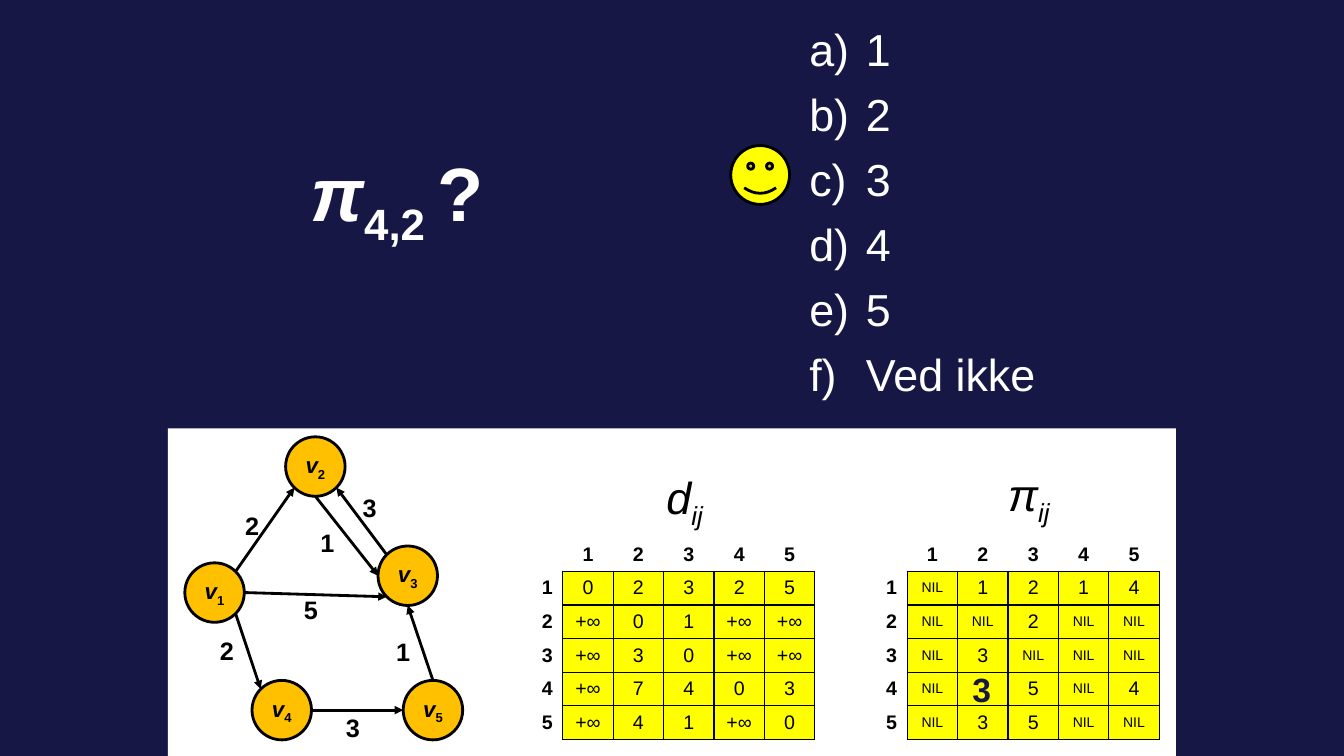
from math import cos, radians, sin

from lxml import etree
from pptx import Presentation
from pptx.dml.color import RGBColor
from pptx.enum.shapes import MSO_CONNECTOR as Connector, MSO_SHAPE as Shape
from pptx.enum.text import MSO_ANCHOR as Anchor, PP_ALIGN as Align
from pptx.oxml.ns import qn
from pptx.util import Pt

NAVY, WHITE, BLACK, YELLOW, ORANGE = "171745", "FFFFFF", "000000", "FFFF00", "FFC000"
SUBSCRIPT = -25000
NODE = 42.5
CELL_WIDTH, CELL_HEIGHT = 36, 24

NODES = {1: (12, 96), 2: (84, 6), 3: (150, 84), 4: (60, 180), 5: (168, 180)}
# Node and connection site at each end; sites run counter-clockwise from the top.
EDGES = [(3, 1, 2, 5), (1, 7, 2, 3), (1, 5, 4, 1), (2, 4, 3, 2),
         (4, 6, 5, 2), (1, 6, 3, 3), (5, 0, 3, 4)]
WEIGHTS = [("2", 30, 144, 24, Align.LEFT), ("2", 48, 55, 24, Align.LEFT),
           ("5", 90, 115, 24, Align.LEFT), ("3", 120, 199, 24, Align.LEFT),
           ("1", 132, 145, 48, Align.RIGHT), ("3", 132, 42, 24, Align.LEFT),
           ("1", 84, 67, 42, Align.RIGHT)]
DISTANCES = ["0 2 3 2 5", "+∞ 0 1 +∞ +∞", "+∞ 3 0 +∞ +∞", "+∞ 7 4 0 3", "+∞ 4 1 +∞ 0"]
PREDECESSORS = ["NIL 1 2 1 4", "NIL NIL 2 NIL NIL", "NIL 3 NIL NIL NIL",
                "NIL - 5 NIL 4", "NIL 3 5 NIL NIL"]


def color(value):
    return RGBColor.from_string(value)


def add_run(paragraph, text, size, hue, baseline=0, **formats):
    run = paragraph.add_run()
    run.text = text
    for name, value in {"name": "Arial", "size": Pt(size), "bold": False, "italic": False,
                        **formats}.items():
        setattr(run.font, name, value)
    run.font.color.rgb = color(hue)
    if baseline:
        run.font._element.set("baseline", str(baseline))


def add_text_box(slide, left, top, width, height, align=Align.LEFT):
    """Add a wrapping text box and return its frame."""
    frame = slide.shapes.add_textbox(Pt(left), Pt(top), Pt(width), Pt(height)).text_frame
    frame.word_wrap = True
    frame.paragraphs[0].alignment = align
    return frame


def add_figure(slide, kind, left, top, width, height, fill, outline=True):
    shape = slide.shapes.add_shape(kind, Pt(left), Pt(top), Pt(width), Pt(height))
    shape.shadow.inherit = False
    shape.fill.solid()
    shape.fill.fore_color.rgb = color(fill)
    if outline:
        shape.line.color.rgb = color(BLACK)
        shape.line.width = Pt(2)
    else:
        shape.line.fill.background()
    return shape


def add_question(slide, left, top, width, height):
    title = slide.shapes.title
    for name, value in {"left": left, "top": top, "width": width, "height": height}.items():
        setattr(title, name, Pt(value))
    title.text_frame.vertical_anchor = Anchor.MIDDLE
    paragraph = title.text_frame.paragraphs[0]
    paragraph.alignment = Align.CENTER
    add_run(paragraph, " π", 54, WHITE, bold=True, italic=True)
    add_run(paragraph, "4,2 ", 54, WHITE, SUBSCRIPT, bold=True)
    add_run(paragraph, "?", 54, WHITE, bold=True)


def add_answers(slide, left, top, width, height):
    frame = add_text_box(slide, left, top, width, height)
    for index, answer in enumerate(["1", "2", "3", "4", "5", "Ved ikke"]):
        paragraph = frame.add_paragraph() if index else frame.paragraphs[0]
        paragraph.space_before = Pt(8 if index else 3)
        add_run(paragraph, answer, 32, WHITE)
        properties = paragraph._p.get_or_add_pPr()
        properties.set("marL", str(Pt(40.5)))
        properties.set("indent", str(-Pt(40.5)))
        etree.SubElement(properties, qn("a:buFont"), typeface="Arial")
        etree.SubElement(properties, qn("a:buAutoNum"), type="alphaLcParenR")
    add_figure(slide, Shape.SMILEY_FACE, left - 49, top + 92, 42, 42, YELLOW)


def add_arrow(slide, start, end):
    arrow = slide.shapes.add_connector(Connector.STRAIGHT, *map(Pt, start + end))
    arrow.line.color.rgb = color(BLACK)
    arrow.line.width = Pt(2)
    etree.SubElement(arrow.line._get_or_add_ln(), qn("a:tailEnd"), type="triangle")
    etree.SubElement(arrow._element.spPr, qn("a:effectLst"))


def add_graph(slide, left, top):
    def site_point(node, site):
        x, y = NODES[node]
        angle, radius = radians(45 * site), NODE / 2
        return (left + x + radius * (1 - sin(angle)), top + y + radius * (1 - cos(angle)))

    for number, (x, y) in NODES.items():
        node = add_figure(slide, Shape.OVAL, left + x, top + y, NODE, NODE, ORANGE)
        frame = node.text_frame
        for name, value in {"margin_left": 0, "margin_right": 0, "word_wrap": False,
                            "vertical_anchor": Anchor.MIDDLE}.items():
            setattr(frame, name, value)
        paragraph = frame.paragraphs[0]
        paragraph.alignment = Align.CENTER
        add_run(paragraph, "v", 16, BLACK, bold=True, italic=True)
        add_run(paragraph, str(number), 16, BLACK, SUBSCRIPT, bold=True)
    for source, source_site, target, target_site in EDGES:
        add_arrow(slide, site_point(source, source_site), site_point(target, target_site))
    for weight, x, y, width, align in WEIGHTS:
        frame = add_text_box(slide, left + x, top + y, width, 29, align)
        add_run(frame.paragraphs[0], weight, 18, BLACK, bold=True)


def format_cell(cell, fill, borders):
    """Set the fill and the borders, given as hues for left, right, top and bottom."""
    properties = cell._tc.get_or_add_tcPr()
    for side, hue in zip("LRTB", borders):
        line = etree.SubElement(properties, qn(f"a:ln{side}"), w=str(Pt(1)))
        solid = etree.SubElement(line, qn("a:solidFill"))
        etree.SubElement(solid, qn("a:srgbClr"), val=hue)
    cell.fill.solid()
    cell.fill.fore_color.rgb = color(fill)
    cell.vertical_anchor = Anchor.MIDDLE


def add_matrix(slide, left, top, symbol, caption_rise, values):
    """Add a numbered matrix with its caption above; "-" leaves a cell empty."""
    numbers = list("12345")
    rows = [["-"] + numbers] + [[n] + row.split() for n, row in zip(numbers, values)]
    size = len(rows)
    table = slide.shapes.add_table(size, size, Pt(left), Pt(top), Pt(size * CELL_WIDTH),
                                   Pt(size * CELL_HEIGHT)).table
    table.first_row = table.horz_banding = False
    for i, row in enumerate(rows):
        for j, value in enumerate(row):
            cell = table.cell(i, j)
            is_label = i == 0 or j == 0
            right = BLACK if i else WHITE
            bottom = BLACK if j else WHITE
            edge = WHITE if is_label else BLACK
            format_cell(cell, WHITE if is_label else YELLOW, (edge, right, edge, bottom))
            paragraph = cell.text_frame.paragraphs[0]
            paragraph.alignment = Align.RIGHT if i and not j else Align.CENTER
            if value == "-":
                paragraph.font.size = Pt(10)
            else:
                add_run(paragraph, value, 10 if value == "NIL" else 14, BLACK, bold=is_label)
    frame = add_text_box(slide, left + 72, top - caption_rise, 102, 46, Align.CENTER)
    add_run(frame.paragraphs[0], symbol, 32, BLACK, italic=True)
    add_run(frame.paragraphs[0], "ij", 32, BLACK, SUBSCRIPT, italic=True)


def add_panel(slide, left, top, width, height):
    add_figure(slide, Shape.RECTANGLE, left, top, width, height, WHITE, outline=False)
    add_graph(slide, left, top)
    add_matrix(slide, left + 246, top + 78, "d", 52, DISTANCES)
    add_matrix(slide, left + 492, top + 78, "π", 54, PREDECESSORS)
    solution = add_text_box(slide, left + 567.5, top + 168, 30, 36.5)
    add_run(solution.paragraphs[0], "3", 24, NAVY, bold=True)


def main():
    presentation = Presentation()
    presentation.slide_width, presentation.slide_height = Pt(960), Pt(540)
    slide = presentation.slides.add_slide(presentation.slide_layouts[5])
    slide.background.fill.solid()
    slide.background.fill.fore_color.rgb = color(NAVY)
    add_answers(slide, 571, 12, 196.5, 294)
    add_question(slide, 168, 90, 216, 102)
    add_panel(slide, 120, 306, 720, 234)
    presentation.save("out.pptx")


if __name__ == "__main__":
    main()
